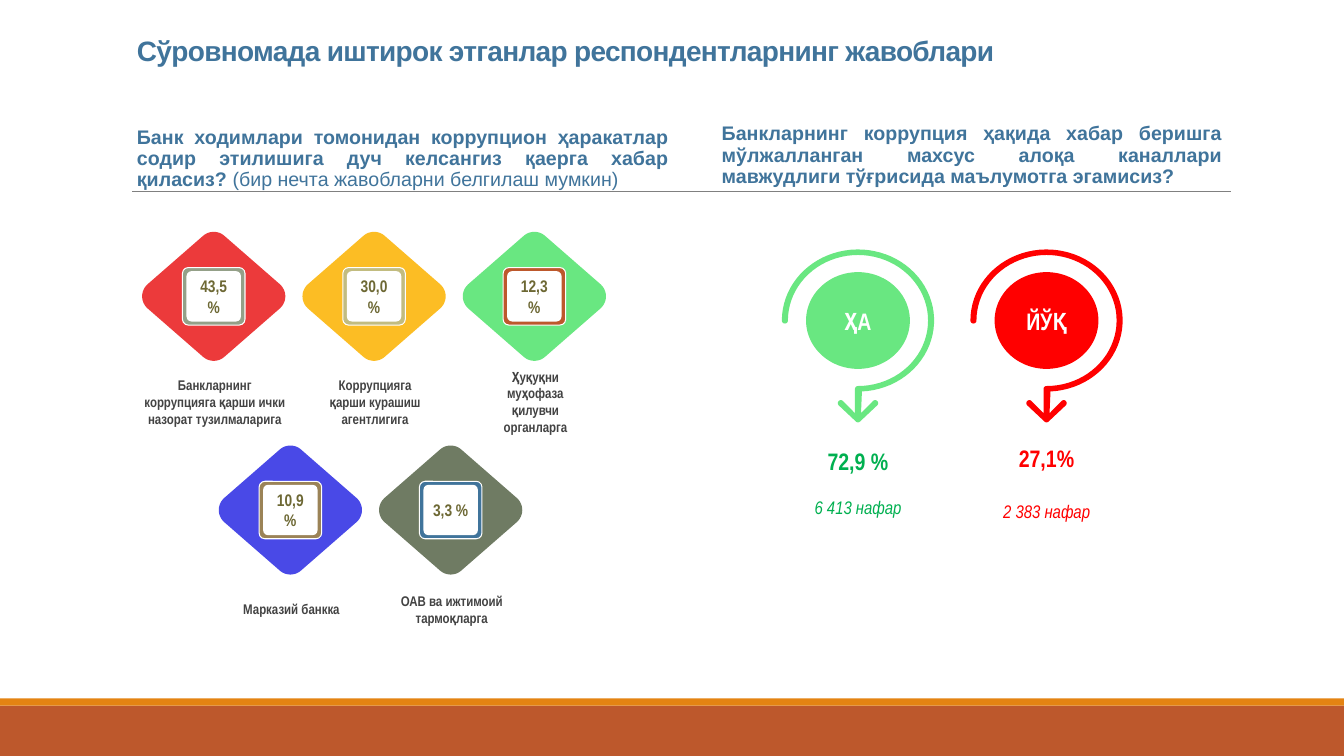
from math import cos, radians, sin

from lxml import etree
from pptx import Presentation
from pptx import util as u
from pptx.dml.color import RGBColor
from pptx.enum import shapes, text
from pptx.oxml.ns import qn

PX = 9144
WIDE, NARROW = "Arial", "Arial Narrow"
HUES = {
    "blue": "40749B", "white": "FFFFFF", "gray": "808080", "rust": "BD582C",
    "orange": "E48312", "lime": "69E781", "green": "00B050", "red": "FF0000",
    "coral": "EC3A3B", "gold": "FCBD24", "indigo": "4949E7", "moss": "6F7B63",
    "sage": "94A088", "sand": "C2BC80", "tan": "9B8357", "olive": "6D6834",
    "ink": "434343",
}
LEFT, MID, JUST = text.PP_ALIGN.LEFT, text.PP_ALIGN.CENTER, text.PP_ALIGN.JUSTIFY
RECT = shapes.MSO_SHAPE.RECTANGLE
ROUND = shapes.MSO_SHAPE.ROUNDED_RECTANGLE
OVAL = shapes.MSO_SHAPE.OVAL


def tint(name):
    return RGBColor.from_string(HUES[name])


def px(*sizes):
    return [u.Emu(round(size * PX)) for size in sizes]


def paint(shape, fill, line=None):
    shape.shadow.inherit = False
    shape.fill.solid()
    shape.fill.fore_color.rgb = tint(fill)
    if line:
        shape.line.color.rgb = tint(line)
        shape.line.width = u.Pt(0.75)
    else:
        shape.line.fill.background()
    return shape


def block(slide, kind, box, fill, line=None):
    return paint(slide.shapes.add_shape(kind, *px(*box)), fill, line)


def outline(slide, x, y, dots, fill):
    ends = [px(x + dx, y + dy) for dx, dy in dots]
    pen = slide.shapes.build_freeform(*ends[0], scale=1.0)
    pen.add_line_segments(ends[1:], close=True)
    return paint(pen.convert_to_shape(), fill)


def arc(x, y, wide, high, start, stop, steps=12):
    turns = [radians(start + (stop - start) * i / steps) for i in range(steps + 1)]
    return [(x + wide * cos(t), y + high * sin(t)) for t in turns]


def style(par, size, hue, face, align=MID, bold=True, italic=False):
    par.alignment = align
    font = par.font
    font.size, font.name = u.Pt(size), face
    font.bold, font.italic = bold, italic
    font.color.rgb = tint(hue)


def frame(shape, side=10, edge=10, anchor=text.MSO_ANCHOR.MIDDLE):
    body = shape.text_frame
    body.word_wrap = True
    body.vertical_anchor = anchor
    body.margin_left = body.margin_right = u.Emu(side * PX)
    body.margin_top = body.margin_bottom = u.Emu(edge * PX)
    return body


def label(shape, words, size, hue, side=10):
    par = frame(shape, side).paragraphs[0]
    par.text = words
    style(par, size, hue, NARROW)


def heading(slide, box, words, note=""):
    body = frame(slide.shapes.add_textbox(*px(*box)), edge=5)
    par = body.paragraphs[0]
    par.line_spacing = 0.9
    par.add_run().text = words
    style(par, 14, "blue", WIDE, JUST)
    if note:
        run = par.add_run()
        run.text = note
        run.font.bold = False


def title(slide, box, words):
    body = frame(slide.shapes.add_textbox(*px(*box)), edge=5,
                 anchor=text.MSO_ANCHOR.BOTTOM)
    par = body.paragraphs[0]
    par.line_spacing = 0.85
    run = par.add_run()
    run.text = words
    run._r.get_or_add_rPr().set("spc", "-50")
    style(par, 20, "blue", WIDE, LEFT)


def footer(slide, x, y, wide, high):
    block(slide, RECT, (x, y + 7, wide, high - 7), "rust")
    block(slide, RECT, (x, y, wide, 7), "orange")


def rule(slide, x, y, wide):
    line = slide.shapes.add_connector(shapes.MSO_CONNECTOR.STRAIGHT,
                                      *px(x, y, x + wide, y))
    line.line.color.rgb = tint("gray")
    line.line.width = u.Pt(0.5)
    etree.SubElement(line._element.spPr, qn("a:effectLst"))


def diamond(slide, x, y, fill, rim, share, words, wide, high):
    dots = []
    for dx, dy, start, stop in ((55, 0, -48, 48), (0, 48, 48, 132),
                                (-55, 0, 132, 228), (0, -48, 228, 312)):
        dots += arc(dx, dy, 16, 16, start, stop)
    outline(slide, x, y, dots, fill)
    for w, h, hue, line in ((62, 57, rim, "white"), (54, 50, "white", None)):
        tile = block(slide, ROUND, (x - w / 2, y - h / 2, w, h), hue, line)
        tile.adjustments[0] = 0.1
    label(tile, share, 12, "olive", 8)
    note = slide.shapes.add_textbox(*px(x - wide / 2 + 1, y + 72, wide, high))
    label(note, words, 10, "ink")


def answer(slide, x, y, fill, hue, word, share, count, gap):
    dots = (arc(0, 0, 75.5, 70.5, 180, 447, 60)
            + [(3, 92)] + arc(17, 82, 3, 3, -135, 45)
            + arc(0, 98, 3, 3, 45, 135) + arc(-17, 82, 3, 3, 135, 315)
            + [(-3, 92)] + arc(0, 68, 3, 3, 180, 270)
            + arc(0, 0, 69.5, 65, 450, 180, 60) + arc(-72.5, 0, 3, 3, 0, 180))
    outline(slide, x, y, dots, fill)
    disc = block(slide, OVAL, (x - 51.5, y - 48, 103, 96), fill)
    label(disc, word, 17, "white", 0)
    box = slide.shapes.add_textbox(*px(x - 81.5, y + 123, 163, 76))
    label(box, share, 17, hue)
    par = box.text_frame.add_paragraph()
    par.text = count
    par.space_before = u.Pt(gap)
    style(par, 13, hue, NARROW, bold=False, italic=True)


def main():
    deck = Presentation()
    deck.slide_width, deck.slide_height = u.Inches(13.33), u.Inches(7.5)
    slide = deck.slides.add_slide(deck.slide_layouts[6])
    footer(slide, 0, 693, 1333, 57)
    rule(slide, 131, 190, 1090)
    title(slide, (126, -4, 1119, 76),
          "Сўровномада иштирок этганлар респондентларнинг жавоблари")
    heading(slide, (126, 98, 547, 120),
            "Банк ходимлари томонидан коррупцион ҳаракатлар содир этилишига "
            "дуч келсангиз қаерга хабар қиласиз? ",
            "(бир нечта жавобларни белгилаш мумкин)")
    heading(slide, (706, 103, 516, 103),
            "Банкларнинг коррупция ҳақида хабар беришга мўлжалланган махсус "
            "алоқа каналлари мавжудлиги тўғрисида маълумотга эгамисиз?")
    rows = (
        (212, 294, 65, (
            ("coral", "sage", "43,5 %",
             "Банкларнинг коррупцияга қарши ички назорат тузилмаларига", 163),
            ("gold", "sand", "30,0 %",
             "Коррупцияга қарши курашиш агентлигига", 125),
            ("lime", "rust", "12,3 %",
             "Ҳуқуқни муҳофаза қилувчи органларга", 125))),
        (288, 506, 53, (
            ("indigo", "tan", "10,9 %", "Марказий банкка", 125),
            ("moss", "blue", "3,3 %", "ОАВ ва ижтимоий тармоқларга", 125))),
    )
    for x, y, high, cells in rows:
        for i, (fill, rim, share, words, wide) in enumerate(cells):
            diamond(slide, x + 159 * i, y, fill, rim, share, words, wide, high)
    answer(slide, 851, 318, "lime", "green", "ҲА", "72,9 %", "6 413 нафар", 15)
    answer(slide, 1038, 318, "red", "red", "ЙЎҚ", "27,1%", "2 383 нафар", 20)
    deck.save("out.pptx")


if __name__ == "__main__":
    main()
